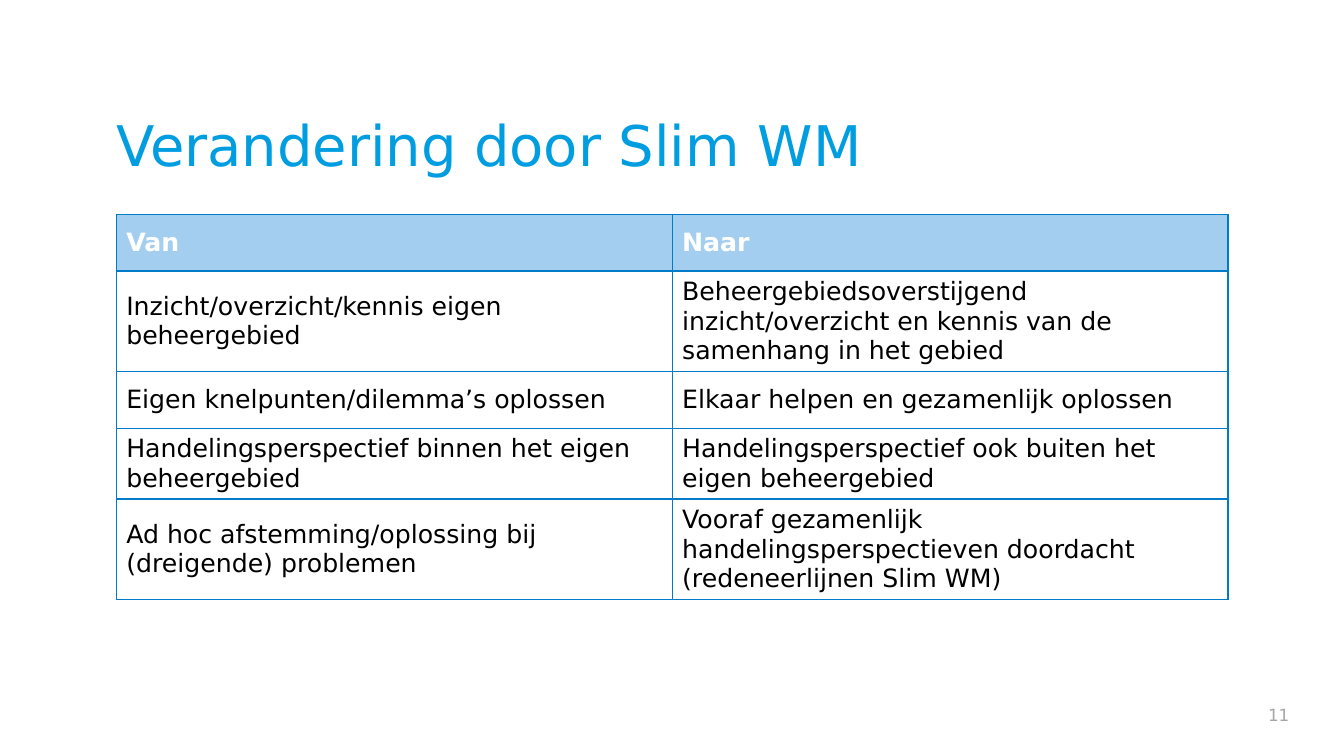
"""Build a slide with a two-column table of changes, from old to new."""
from lxml.etree import SubElement
from pptx import Presentation
from pptx.dml.color import RGBColor
from pptx.enum.text import MSO_ANCHOR as Anchor, PP_ALIGN as Align
from pptx.oxml.ns import qn
from pptx.util import Pt

COLORS = {
    "title": "009EE1",
    "number": "A6A6A6",
    "header": "A4CEF0",
    "header_text": "FFFFFF",
    "text": "000000",
    "border": "007BC7",
}
ROWS = [
    ("Van", "Naar"),
    ("Inzicht/overzicht/kennis eigen beheergebied",
     "Beheergebiedsoverstijgend inzicht/overzicht en kennis van de samenhang in het gebied"),
    ("Eigen knelpunten/dilemma’s oplossen", "Elkaar helpen en gezamenlijk oplossen"),
    ("Handelingsperspectief binnen het eigen beheergebied",
     "Handelingsperspectief ook buiten het eigen beheergebied"),
    ("Ad hoc afstemming/oplossing bij (dreigende) problemen",
     "Vooraf gezamenlijk handelingsperspectieven doordacht (redeneerlijnen Slim WM)"),
]
ROW_HEIGHT = 40.4
COLUMN_WIDTH = 397.1


def write(frame, text, size=18, color="text", bold=False, align=Align.LEFT):
    frame.word_wrap = True
    para = frame.paragraphs[0]
    para.alignment = align
    span = para.add_run()
    span.text = text
    span.font.name = "DejaVu Sans"
    span.font.size = Pt(size)
    span.font.bold = bold
    span.font.color.rgb = RGBColor.from_string(COLORS[color])


def add_borders(cell):
    properties = cell._tc.get_or_add_tcPr()
    for position, side in enumerate(("a:lnL", "a:lnR", "a:lnT", "a:lnB")):
        line = SubElement(properties, qn(side), w=str(Pt(1)))
        fill = SubElement(line, qn("a:solidFill"))
        SubElement(fill, qn("a:srgbClr"), val=COLORS["border"])
        properties.insert(position, line)


deck = Presentation()
deck.slide_width = Pt(960)
deck.slide_height = Pt(540)
page = deck.slides.add_slide(deck.slide_layouts[6])

title = page.shapes.add_textbox(Pt(83), Pt(57.6), Pt(828.7), Pt(90)).text_frame
title.margin_left = Pt(0)
title.vertical_anchor = Anchor.MIDDLE
write(title, "Verandering door Slim WM", size=40, color="title")

number = page.shapes.add_textbox(Pt(704.2), Pt(500.4), Pt(223.9), Pt(20.9)).text_frame
number.vertical_anchor = Anchor.MIDDLE
write(number, "11", size=12, color="number", align=Align.RIGHT)

table = page.shapes.add_table(
    len(ROWS), 2, Pt(83), Pt(153.2), Pt(2 * COLUMN_WIDTH), Pt(len(ROWS) * ROW_HEIGHT)
).table
for row, texts in enumerate(ROWS):
    for column, text in enumerate(texts):
        cell = table.cell(row, column)
        cell.vertical_anchor = Anchor.MIDDLE
        if row == 0:
            cell.fill.solid()
            cell.fill.fore_color.rgb = RGBColor.from_string(COLORS["header"])
            write(cell.text_frame, text, color="header_text", bold=True)
        else:
            cell.fill.background()
            write(cell.text_frame, text)
        add_borders(cell)

deck.save("out.pptx")
